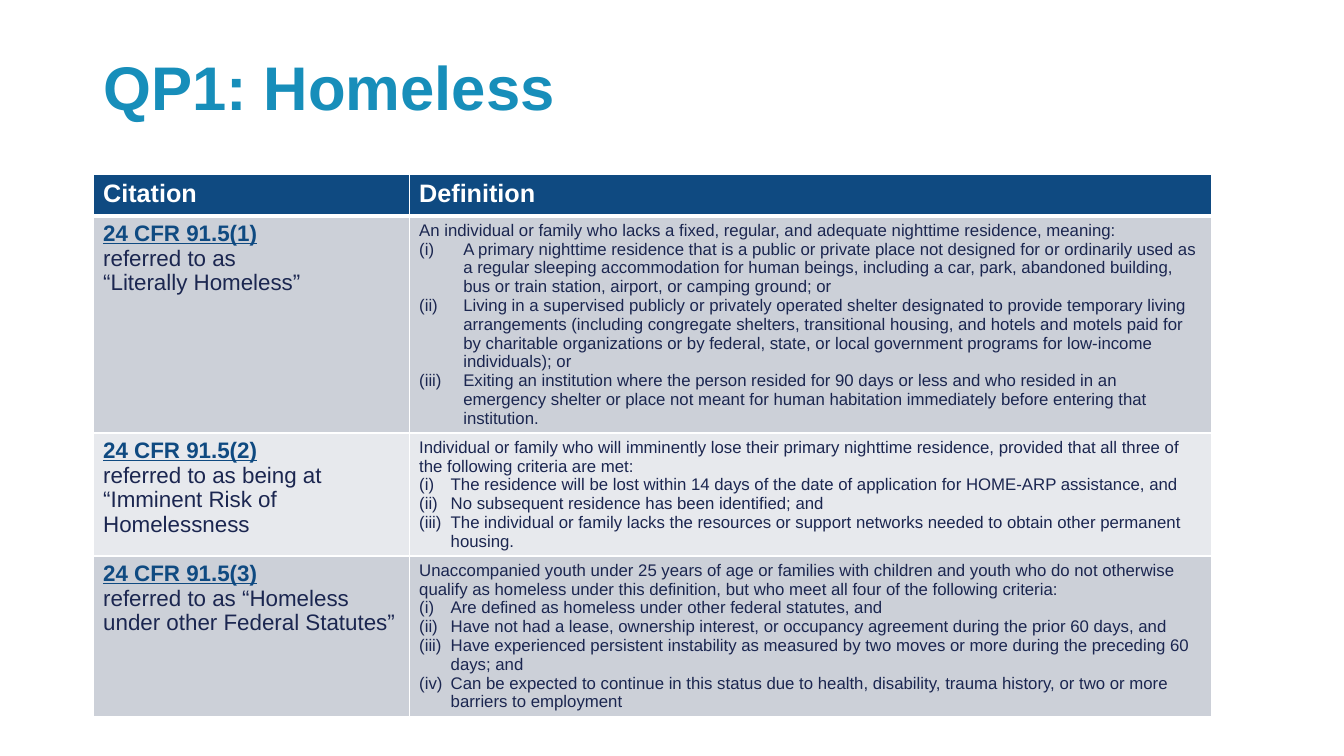
from lxml.etree import SubElement
from pptx import Presentation
from pptx.dml.color import RGBColor
from pptx.enum.text import MSO_ANCHOR as Anchor, PP_ALIGN as Align
from pptx.oxml import parse_xml
from pptx.oxml.ns import nsdecls, qn
from pptx.util import Pt

# Content
TITLE = "QP1: Homeless"
HEADERS = ["Citation", "Definition"]
# Each entry: citation, description lines, introduction, criteria, criteria indent, row height
DEFINITIONS = [
    ("24 CFR 91.5(1)",
     ["referred to as", "“Literally Homeless”"],
     "An individual or family who lacks a fixed, regular, and adequate nighttime residence, meaning:",
     ["A primary nighttime residence that is a public or private place not designed for or "
      "ordinarily used as a regular sleeping accommodation for human beings, including a car, "
      "park, abandoned building, bus or train station, airport, or camping ground; or",
      "Living in a supervised publicly or privately operated shelter designated to provide "
      "temporary living arrangements (including congregate shelters, transitional housing, and "
      "hotels and motels paid for by charitable organizations or by federal, state, or local "
      "government programs for low-income individuals); or",
      "Exiting an institution where the person resided for 90 days or less and who resided in an "
      "emergency shelter or place not meant for human habitation immediately before entering "
      "that institution."],
     31.5, 154),
    ("24 CFR 91.5(2)",
     ["referred to as being at “Imminent Risk of Homelessness"],
     "Individual or family who will imminently lose their primary nighttime residence, provided "
     "that all three of the following criteria are met:",
     ["The residence will be lost within 14 days of the date of application for HOME-ARP "
      "assistance, and",
      "No subsequent residence has been identified; and",
      "The individual or family lacks the resources or support networks needed to obtain other "
      "permanent housing."],
     22.5, 87),
    ("24 CFR 91.5(3)",
     ["referred to as “Homeless under other Federal Statutes”"],
     "Unaccompanied youth under 25 years of age or families with children and youth who do not "
     "otherwise qualify as homeless under this definition, but who meet all four of the "
     "following criteria:",
     ["Are defined as homeless under other federal statutes, and",
      "Have not had a lease, ownership interest, or occupancy agreement during the prior 60 "
      "days, and",
      "Have experienced persistent instability as measured by two moves or more during the "
      "preceding 60 days; and",
      "Can be expected to continue in this status due to health, disability, trauma history, or "
      "two or more barriers to employment"],
     22.5, 114),
]
NAVY, INK, TEAL, WHITE = "0F4A81", "1B2650", "178EBA", "FFFFFF"
BANDS = ["CCD0D8", "E7E9ED"]
LEFT, TABLE_TOP, HEADER_HEIGHT = 66.5, 124.75, 29.5
COLUMN_WIDTHS = [225.75, 573]


def color(hex_value):
    return RGBColor.from_string(hex_value)


def write(frame, text, size=12, ink=INK, bold=False, underline=False, indent=0):
    """Fill the empty first paragraph, or add another one."""
    paragraph = frame.paragraphs[0]
    if paragraph.runs:
        paragraph = frame.add_paragraph()
    paragraph.alignment = Align.LEFT
    if indent:
        properties = paragraph._p.get_or_add_pPr()
        properties.set("marL", str(Pt(indent)))
        properties.set("indent", str(-Pt(indent)))
        SubElement(properties, qn("a:buFont"), typeface="+mj-lt")
        SubElement(properties, qn("a:buAutoNum"), type="romanLcParenBoth")
    run = paragraph.add_run()
    run.text = text
    font = run.font
    font.name, font.size, font.bold, font.underline = "Arial", Pt(size), bold, underline
    font.color.rgb = color(ink)
    return paragraph


def style_cell(cell, fill, top=1, bottom=1):
    cell.fill.solid()
    cell.fill.fore_color.rgb = color(fill)
    widths = {"L": 1, "R": 1, "T": top, "B": bottom}
    for position, (side, width) in enumerate(widths.items()):
        border = parse_xml(
            f'<a:ln{side} {nsdecls("a")} w="{Pt(width)}"><a:solidFill>'
            f'<a:srgbClr val="{WHITE}"/></a:solidFill></a:ln{side}>')
        cell._tc.get_or_add_tcPr().insert(position, border)


presentation = Presentation()
presentation.slide_width, presentation.slide_height = Pt(960), Pt(540)
slide = presentation.slides.add_slide(presentation.slide_layouts[5])

# Title
title = slide.shapes.title
title.left, title.top, title.width, title.height = Pt(LEFT), Pt(28.75), Pt(806), Pt(72)
title.text_frame.vertical_anchor = Anchor.MIDDLE
write(title.text_frame, TITLE, size=44, ink=TEAL, bold=True).line_spacing = 0.9

# Table grid
heights = [HEADER_HEIGHT] + [definition[-1] for definition in DEFINITIONS]
table = slide.shapes.add_table(
    len(heights), len(COLUMN_WIDTHS), Pt(LEFT), Pt(TABLE_TOP),
    Pt(sum(COLUMN_WIDTHS)), Pt(sum(heights))).table
for column, width in zip(table.columns, COLUMN_WIDTHS):
    column.width = Pt(width)
for row, height in zip(table.rows, heights):
    row.height = Pt(height)

# Header row
for cell, header in zip(table.rows[0].cells, HEADERS):
    style_cell(cell, NAVY, bottom=3)
    write(cell.text_frame, header, size=18, ink=WHITE, bold=True)

# Definition rows
for index, (citation, description, intro, criteria, indent, _) in enumerate(DEFINITIONS):
    cells = list(table.rows[index + 1].cells)
    for cell in cells:
        style_cell(cell, BANDS[index % 2], top=1 if index else 3)
    citation_frame, definition_frame = [cell.text_frame for cell in cells]
    write(citation_frame, citation, size=16, ink=NAVY, bold=True, underline=True)
    for line in description:
        write(citation_frame, line, size=16)
    write(definition_frame, intro)
    for criterion in criteria:
        write(definition_frame, criterion, indent=indent)

presentation.save("out.pptx")
